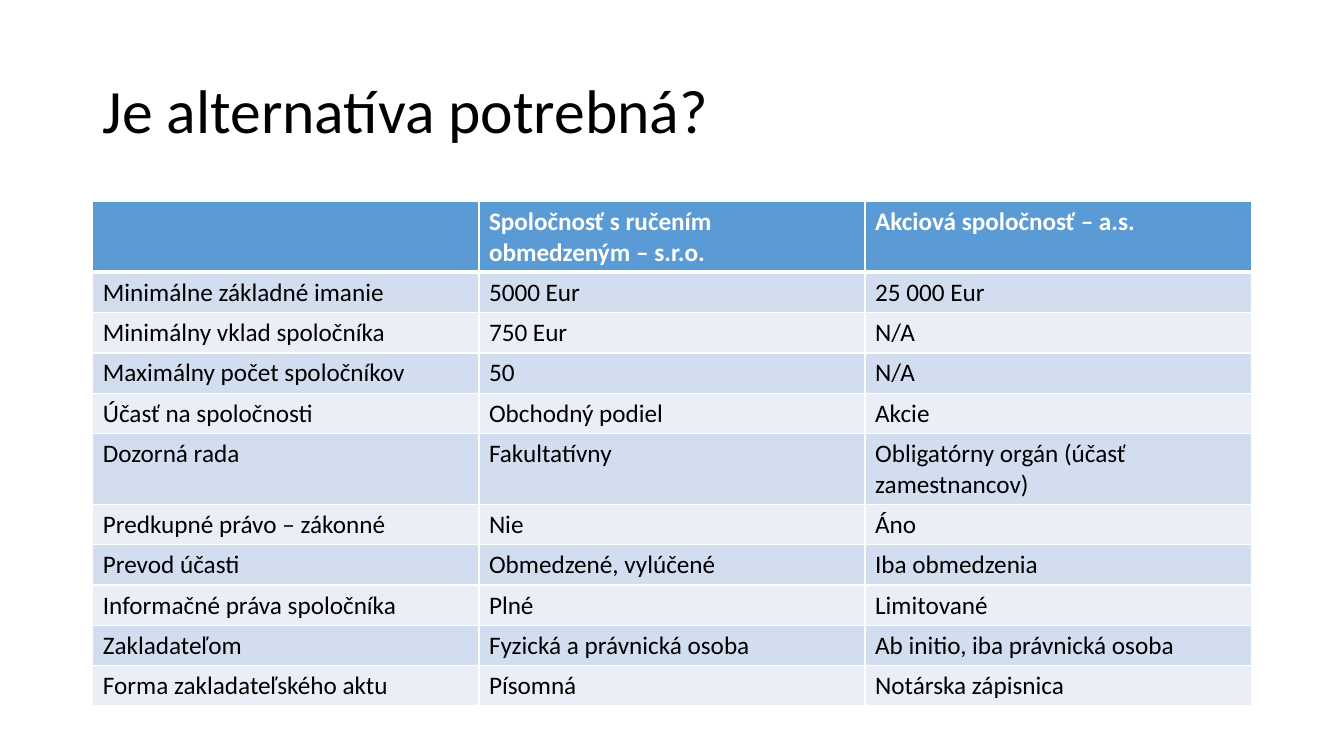
from lxml.etree import SubElement
from pptx import Presentation
from pptx.dml.color import RGBColor
from pptx.enum.text import MSO_ANCHOR
from pptx.oxml.ns import qn
from pptx.util import Inches, Pt

W, H = 13.33, 7.5
MARGIN = 0.92
HEADER, BANDS, WHITE, BLACK = "5B9BD5", ("EAEFF7", "D2DEEF"), "FFFFFF", "000000"
ONE_LINE, TWO_LINES = 0.4, 0.7

TITLE = "Je alternatíva potrebná?"
ROWS = [
    ("", "Spoločnosť s ručením obmedzeným – s.r.o.", "Akciová spoločnosť – a.s."),
    ("Minimálne základné imanie", "5000 Eur", "25 000 Eur"),
    ("Minimálny vklad spoločníka", "750 Eur", "N/A"),
    ("Maximálny počet spoločníkov", "50", "N/A"),
    ("Účasť na spoločnosti", "Obchodný podiel", "Akcie"),
    ("Dozorná rada", "Fakultatívny", "Obligatórny orgán (účasť zamestnancov)"),
    ("Predkupné právo – zákonné", "Nie", "Áno"),
    ("Prevod účasti", "Obmedzené, vylúčené", "Iba obmedzenia"),
    ("Informačné práva spoločníka", "Plné", "Limitované"),
    ("Zakladateľom", "Fyzická a právnická osoba", "Ab initio, iba právnická osoba"),
    ("Forma zakladateľského aktu", "Písomná", "Notárska zápisnica"),
]
TALL_ROWS = {0, 5}


def paint(color, value):
    color.rgb = RGBColor.from_string(value)


def write(tf, text, color, **font):
    r = tf.paragraphs[0].add_run()
    r.text = text
    for name, value in {"name": "Calibri", **font}.items():
        setattr(r.font, name, value)
    paint(r.font.color, color)


def set_borders(cell, top, bottom):
    tcPr = cell._tc.get_or_add_tcPr()
    for side, width in {"L": 1, "R": 1, "T": top, "B": bottom}.items():
        ln = SubElement(tcPr, qn(f"a:ln{side}"), w=str(Pt(width)))
        fill = SubElement(ln, qn("a:solidFill"))
        SubElement(fill, qn("a:srgbClr"), val=WHITE)


def add_title(s, x, y, w, h):
    tf = s.shapes.add_textbox(*map(Inches, (x, y, w, h))).text_frame
    tf.word_wrap = True
    tf.vertical_anchor = MSO_ANCHOR.MIDDLE
    tf.paragraphs[0].line_spacing = 0.9
    write(tf, TITLE, BLACK, size=Pt(44))


def add_comparison(s, x, y, w):
    heights = [TWO_LINES if i in TALL_ROWS else ONE_LINE for i in range(len(ROWS))]
    box = map(Inches, (x, y, w, sum(heights)))
    table = s.shapes.add_table(len(ROWS), len(ROWS[0]), *box).table
    for i, texts in enumerate(ROWS):
        table.rows[i].height = Inches(heights[i])
        head = i == 0
        for j, text in enumerate(texts):
            cell = table.cell(i, j)
            # Thick rule between the header and the first row
            set_borders(cell, top=3 if i == 1 else 1, bottom=3 if head else 1)
            cell.fill.solid()
            paint(cell.fill.fore_color, HEADER if head else BANDS[i % 2])
            write(cell.text_frame, text, WHITE if head else BLACK, size=Pt(18), bold=head)


def main():
    prs = Presentation()
    prs.slide_width, prs.slide_height = Inches(W), Inches(H)
    s = prs.slides.add_slide(prs.slide_layouts[6])
    width = W - 2 * MARGIN
    add_title(s, MARGIN, 0.4, width, 1.45)
    add_comparison(s, MARGIN, 2, width)
    prs.save("out.pptx")


if __name__ == "__main__":
    main()
